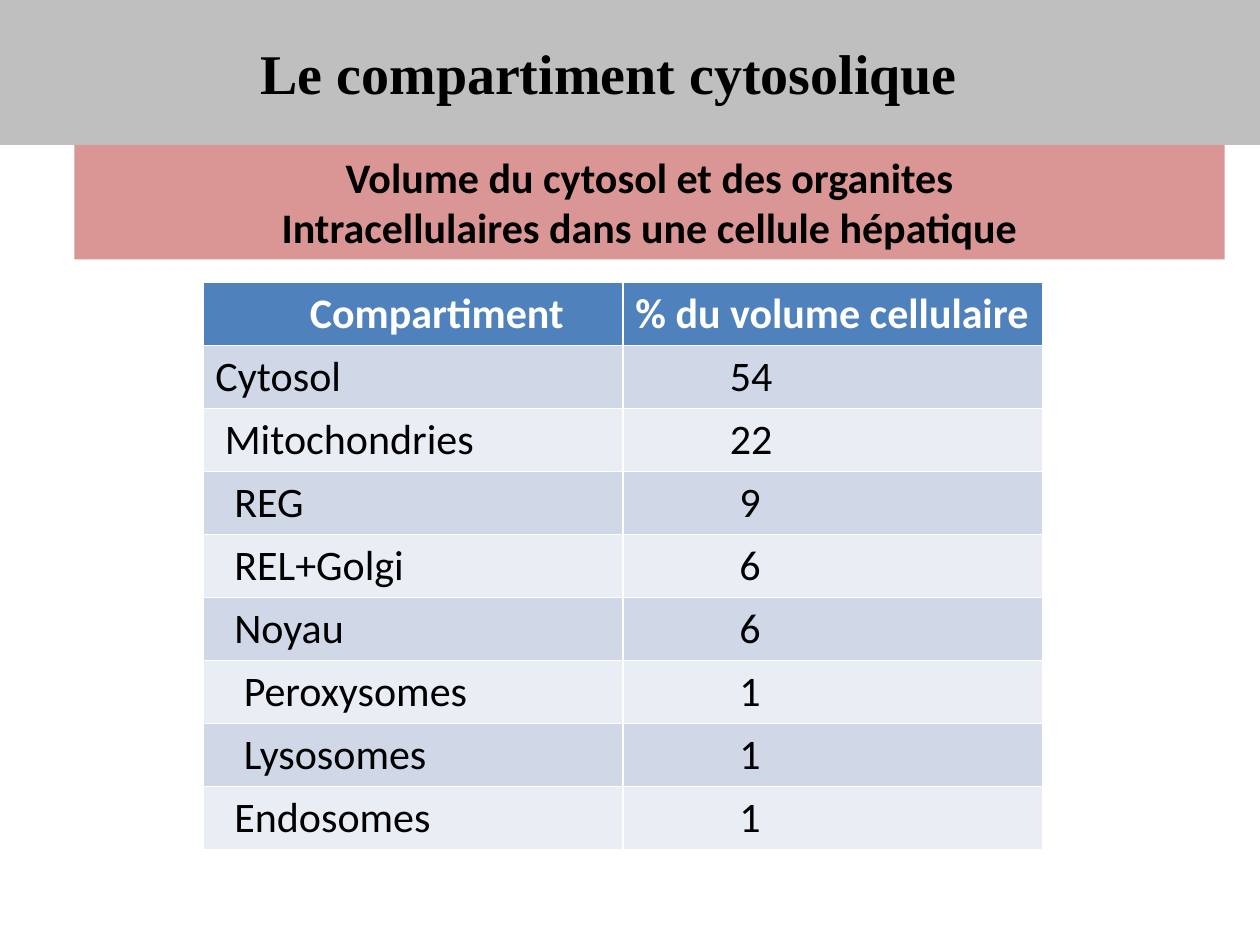
from pptx import Presentation, util as u
from pptx.dml.color import RGBColor
from pptx.enum import text

BLACK = RGBColor(0x00, 0x00, 0x00)
WHITE = RGBColor(0xFF, 0xFF, 0xFF)
GREY = RGBColor(0xBF, 0xBF, 0xBF)
ROSE = RGBColor(0xD9, 0x96, 0x94)
BLUE = RGBColor(0x4F, 0x81, 0xBD)
BANDS = (RGBColor(0xE9, 0xED, 0xF4), RGBColor(0xD0, 0xD8, 0xE8))

MARGIN = 0.1  # inches, inner margin of a cell
STEP = 0.075  # inches, one indent step in a cell

# Each row: compartment, its indent steps, share of volume, its indent steps
ROWS = [
    ("Compartiment", 10, "% du volume cellulaire", 0),
    ("Cytosol", 0, "54", 10),
    ("Mitochondries", 1, "22", 10),
    ("REG", 2, "9", 11),
    ("REL+Golgi", 2, "6", 11),
    ("Noyau", 2, "6", 11),
    ("Peroxysomes", 3, "1", 11),
    ("Lysosomes", 3, "1", 11),
    ("Endosomes", 2, "1", 11),
]


def format_text(frame, font_name, size, colour, bold, align):
    for paragraph in frame.paragraphs:
        paragraph.alignment = align
        for run in paragraph.runs:
            run.font.name = font_name
            run.font.size = u.Pt(size)
            run.font.bold = bold
            run.font.color.rgb = colour


def fill(part, colour):
    part.fill.solid()
    part.fill.fore_color.rgb = colour


prs = Presentation()
prs.slide_width, prs.slide_height = u.Inches(10), u.Inches(7.5)
slide = prs.slides.add_slide(prs.slide_layouts[5])
CENTER, LEFT = text.PP_ALIGN.CENTER, text.PP_ALIGN.LEFT

# Title band across the full width
title = slide.shapes.title
title.left, title.top = 0, 0
title.width, title.height = prs.slide_width, u.Inches(1.15)
fill(title, GREY)
heading = title.text_frame
heading.text = "Le compartiment cytosolique"
heading.auto_size = text.MSO_AUTO_SIZE.NONE
heading.vertical_anchor = text.MSO_ANCHOR.MIDDLE
heading.margin_right = u.Inches(0.43)
format_text(heading, "Times New Roman", 32, BLACK, True, CENTER)

# Subtitle band directly below the title
subtitle = slide.shapes.add_textbox(
    u.Inches(0.59), title.height, u.Inches(9.13), u.Inches(0.91))
fill(subtitle, ROSE)
caption = subtitle.text_frame
caption.word_wrap = True
caption.text = ("Volume du cytosol et des organites\n"
                "Intracellulaires dans une cellule hépatique")
format_text(caption, "Calibri", 24, BLACK, True, CENTER)

# Table of volumes, header first, then alternating bands
volumes = slide.shapes.add_table(
    len(ROWS), 2, u.Inches(1.61), u.Inches(2.24),
    prs.slide_width * 2 // 3, u.Inches(0.5) * len(ROWS)).table

for r, (compartment, name_steps, share, share_steps) in enumerate(ROWS):
    header = r == 0
    for c, (words, steps) in enumerate(
            [(compartment, name_steps), (share, share_steps)]):
        cell = volumes.cell(r, c)
        fill(cell, BLUE if header else BANDS[r % 2])
        cell.margin_left = u.Inches(MARGIN + steps * STEP)
        cell.text_frame.text = words
        format_text(cell.text_frame, "Calibri", 24,
                    WHITE if header else BLACK, header, LEFT)

prs.save("out.pptx")
